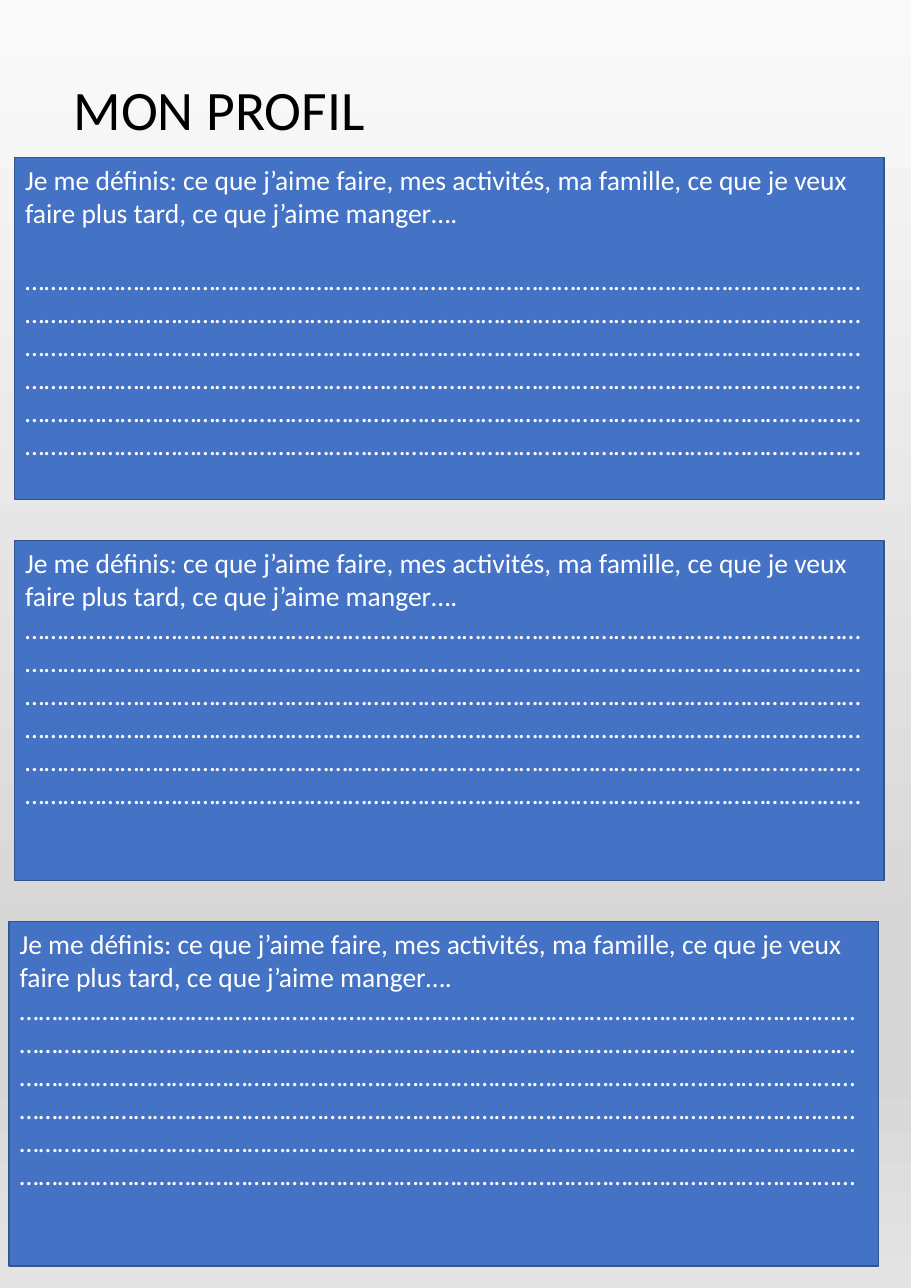
import copy

import pptx
import pptx.dml.color
import pptx.enum.shapes
import pptx.enum.text
import pptx.oxml.ns
import pptx.util

Inches = pptx.util.Inches
Pt = pptx.util.Pt

PROMPT = (
    "Je me définis: ce que j’aime faire, mes activités, ma famille, "
    "ce que je veux faire plus tard, ce que j’aime manger…."
)
LINES_PER_BOX = 6
ELLIPSES_PER_LINE = 44
BACKGROUND_STOPS = [(0, "FAFAFA"), (0.74, "D7D7D7"), (0.83, "D7D7D7"), (1, "E4E4E4")]
PROFILE_BOXES = [
    (0.13, 1.43, 7.9, 3.11, 22),
    (0.13, 4.91, 7.9, 3.09, 0),
    (0.08, 8.37, 7.9, 3.13, 0),
]


def color(hex_string):
    return pptx.dml.color.RGBColor.from_string(hex_string)


def write_text(paragraph, text, size=18, hex_color="FFFFFF", space_before=0, line_spacing=1.0):
    paragraph.alignment = pptx.enum.text.PP_ALIGN.LEFT
    paragraph.space_before = Pt(space_before)
    paragraph.line_spacing = line_spacing
    run = paragraph.add_run()
    run.text = text
    run.font.name = "Calibri"
    run.font.size = Pt(size)
    run.font.color.rgb = color(hex_color)


def paint_background(slide):
    fill = slide.background.fill
    fill.gradient()
    fill.gradient_angle = 270
    stop_list = slide.element.find(".//" + pptx.oxml.ns.qn("a:gsLst"))
    while len(stop_list) < len(BACKGROUND_STOPS):
        stop_list.append(copy.deepcopy(stop_list[0]))
    for stop, (position, hex_color) in zip(fill.gradient_stops, BACKGROUND_STOPS):
        stop.position = position
        stop.color.rgb = color(hex_color)


def add_title(slide, left, top, width, height):
    title = slide.shapes.add_textbox(Inches(left), Inches(top), Inches(width), Inches(height))
    frame = title.text_frame
    frame.word_wrap = True
    frame.vertical_anchor = pptx.enum.text.MSO_ANCHOR.MIDDLE
    write_text(frame.paragraphs[0], "MON PROFIL", size=36.4, hex_color="000000", line_spacing=0.9)


def add_profile_box(slide, left, top, width, height, gap):
    box = slide.shapes.add_shape(
        pptx.enum.shapes.MSO_SHAPE.RECTANGLE,
        Inches(left), Inches(top), Inches(width), Inches(height),
    )
    box.shadow.inherit = False
    box.fill.solid()
    box.fill.fore_color.rgb = color("4472C4")
    box.line.color.rgb = color("325491")
    box.line.width = Pt(1)
    frame = box.text_frame
    frame.word_wrap = True
    frame.vertical_anchor = pptx.enum.text.MSO_ANCHOR.TOP
    write_text(frame.paragraphs[0], PROMPT)
    dotted_lines = "…" * (ELLIPSES_PER_LINE * LINES_PER_BOX)
    write_text(frame.add_paragraph(), dotted_lines, space_before=gap)


def main():
    presentation = pptx.Presentation()
    presentation.slide_width = Inches(8.275)
    presentation.slide_height = Inches(11.7)
    slide_size = presentation.element.find(pptx.oxml.ns.qn("p:sldSz"))
    slide_size.attrib.pop("type", None)
    slide = presentation.slides.add_slide(presentation.slide_layouts[6])
    paint_background(slide)
    add_title(slide, 0.57, 0.62, 7.14, 0.81)
    for profile_box in PROFILE_BOXES:
        add_profile_box(slide, *profile_box)
    presentation.save("out.pptx")


if __name__ == "__main__":
    main()
